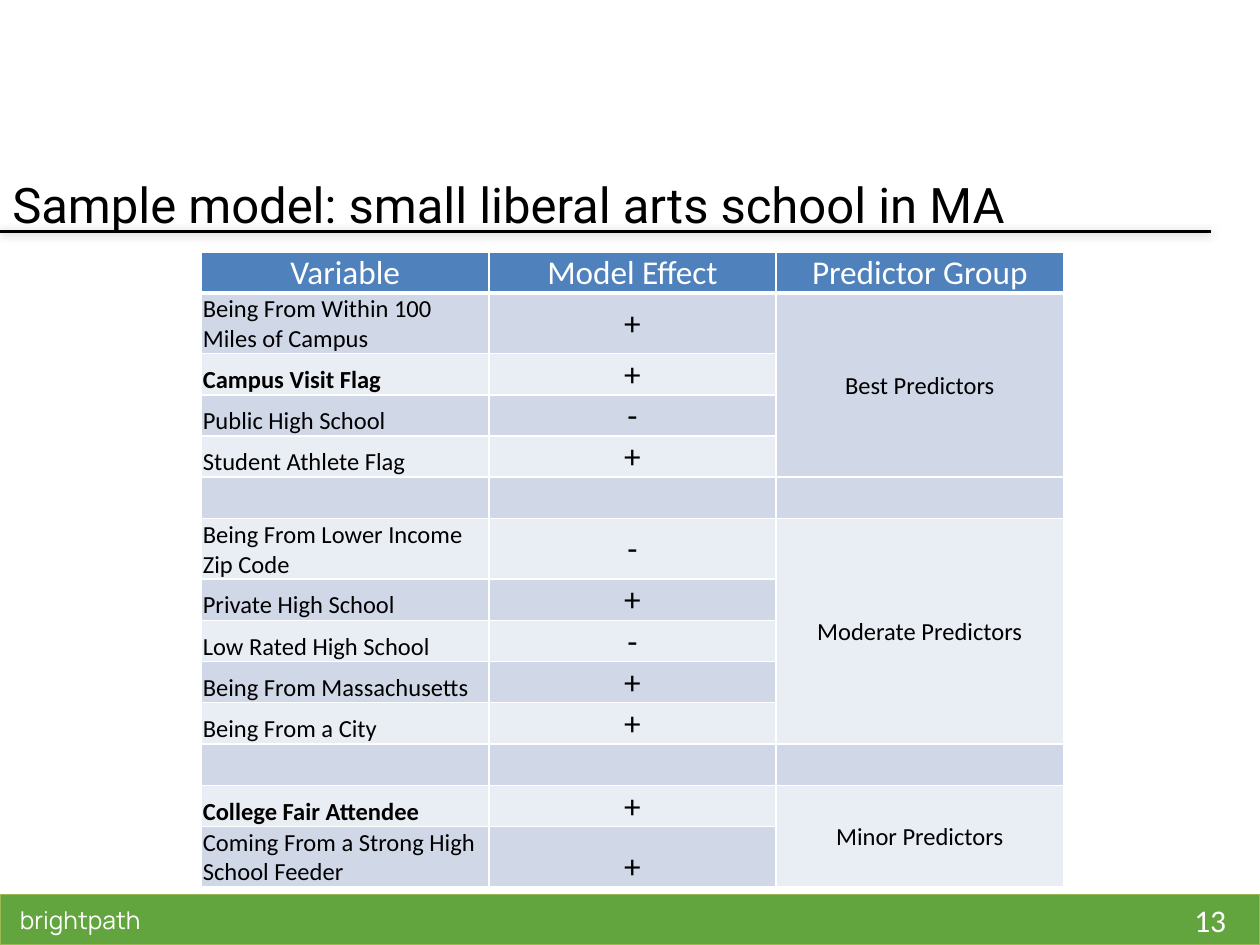
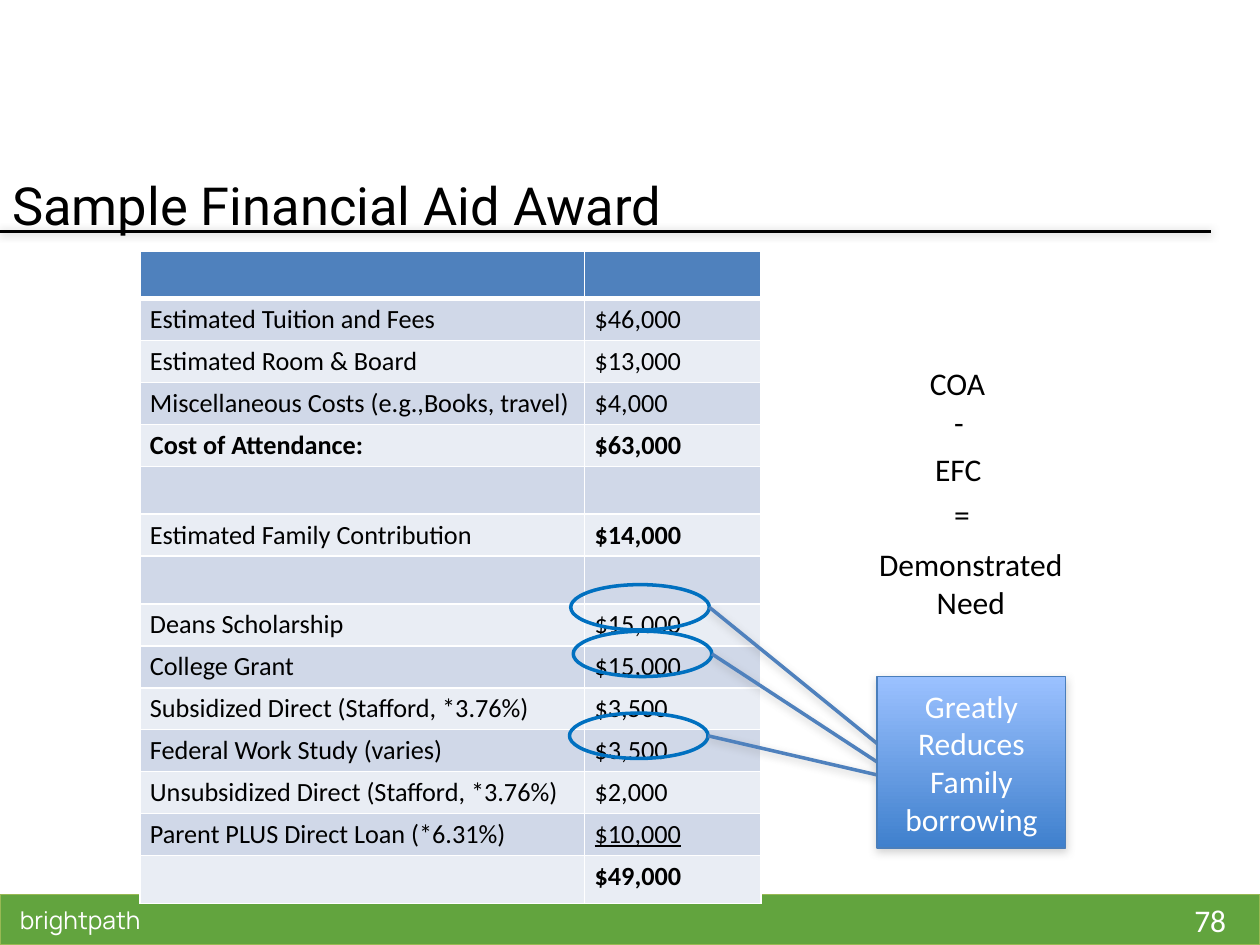
"""Build two slides on admission predictors and a sample financial aid award."""

from dataclasses import dataclass
from typing import NamedTuple, Optional, Sequence

from lxml.etree import SubElement
from pptx import Presentation
from pptx.dml.color import RGBColor
from pptx.enum.shapes import MSO_CONNECTOR, MSO_SHAPE
from pptx.enum.text import MSO_ANCHOR, PP_ALIGN
from pptx.oxml.ns import qn
from pptx.util import Emu, Inches, Pt

UNIT = Inches(0.1)
GRID_COLUMNS, GRID_ROWS = 100, 75


@dataclass(frozen=True)
class Theme:
    """Colours, fonts and type sizes of the deck."""

    ink: str = "000000"
    paper: str = "FFFFFF"
    footer: str = "62A43E"
    footer_edge: str = "98B954"
    accent: str = "4F81BD"
    band_dark: str = "D0D8E8"
    band_light: str = "E9EDF4"
    highlight: str = "0070C0"
    callout_top: str = "9BC1FF"
    callout_bottom: str = "3F80CD"
    callout_edge: str = "4A7EBB"
    shadow: str = "808080"
    body_font: str = "Calibri"
    title_font: str = "Roboto"
    brand_font: str = "Manrope"
    heading: int = 19
    text: int = 18
    award: int = 15
    small: int = 14


THEME = Theme()


class Area(NamedTuple):
    """Left, top, width and height in grid columns and rows."""

    left: float
    top: float
    width: float
    height: float


class Shadow(NamedTuple):
    """Downward shadow: opacity in percent, blur and distance in points."""

    opacity: int
    blur: float
    distance: float


class Factor(NamedTuple):
    """One predictor variable and the direction of its effect."""

    name: str
    effect: str
    bold: bool = False
    rows: float = 3.2


class PredictorGroup(NamedTuple):
    """Factors of similar strength."""

    title: str
    factors: Sequence[Factor]


class AwardLine(NamedTuple):
    """One line of the award letter."""

    label: str = ""
    amount: str = ""
    bold_label: bool = False
    bold_amount: bool = False
    underline: bool = False


class Aid(NamedTuple):
    """Ring around an aid amount and the tip of its leader line."""

    left: float
    top: float
    tip_column: float
    tip_row: float


GROUPS = (
    PredictorGroup("Best Predictors", (
        Factor("Being From Within 100 Miles of Campus", "+", rows=4.8),
        Factor("Campus Visit Flag", "+", bold=True),
        Factor("Public High School", "-"),
        Factor("Student Athlete Flag", "+"),
    )),
    PredictorGroup("Moderate Predictors", (
        Factor("Being From Lower Income Zip Code", "-", rows=4.8),
        Factor("Private High School", "+"),
        Factor("Low Rated High School", "-"),
        Factor("Being From Massachusetts", "+"),
        Factor("Being From a City", "+"),
    )),
    PredictorGroup("Minor Predictors", (
        Factor("College Fair Attendee", "+", bold=True),
        Factor("Coming From a Strong High School Feeder", "+", rows=4.8),
    )),
)

AWARD = (
    AwardLine(),
    AwardLine("Estimated Tuition and Fees", "$46,000"),
    AwardLine("Estimated Room & Board", "$13,000"),
    AwardLine("Miscellaneous Costs (e.g.,Books, travel)", "$4,000"),
    AwardLine("Cost of Attendance:", "$63,000", bold_label=True, bold_amount=True),
    AwardLine(),
    AwardLine("Estimated Family Contribution", "$14,000", bold_amount=True),
    AwardLine(),
    AwardLine("Deans Scholarship", "$15,000"),
    AwardLine("College Grant", "$15,000"),
    AwardLine("Subsidized Direct (Stafford, *3.76%)", "$3,500"),
    AwardLine("Federal Work Study (varies)", "$3,500"),
    AwardLine("Unsubsidized Direct (Stafford, *3.76%)", "$2,000"),
    AwardLine("Parent PLUS Direct Loan (*6.31%)", "$10,000", underline=True),
    AwardLine("", "$49,000", bold_amount=True),
)

FORMULA = (
    ("COA", Area(72.8, 28.4, 6.4, 4)),
    ("-", Area(74.7, 31.5, 2.8, 4)),
    ("EFC", Area(73.2, 35.2, 5.7, 4)),
    ("=", Area(74.7, 38.8, 3.3, 4)),
    ("Demonstrated\nNeed", Area(68.7, 42.8, 16.7, 7.1)),
)

AIDS = (Aid(45.3, 46.4, 71.2, 60.3), Aid(45.5, 50.1, 72.1, 62.1), Aid(45.2, 56.6, 72.2, 62.1))


def grid(count: float) -> Emu:
    """Turn grid columns or rows into a length."""
    return Emu(round(count * UNIT))


def place(area: Area) -> tuple:
    """Turn an area into four lengths."""
    return tuple(grid(count) for count in area)


def color(value: str) -> RGBColor:
    """Read a hexadecimal colour."""
    return RGBColor.from_string(value)


def write(frame, text: str, *, size: float = THEME.text, font: str = THEME.body_font,
          ink: str = THEME.ink, bold: bool = False, underline: bool = False,
          align: PP_ALIGN = PP_ALIGN.LEFT) -> None:
    """Write lines of text as formatted paragraphs."""
    for index, line in enumerate(text.split("\n")):
        paragraph = frame.add_paragraph() if index else frame.paragraphs[0]
        paragraph.alignment = align
        run = paragraph.add_run()
        run.text = line
        run.font.size, run.font.name = Pt(size), font
        run.font.bold, run.font.underline = bold, underline
        run.font.color.rgb = color(ink)


def add_label(slide, area: Area, text: str, *, anchor: MSO_ANCHOR = MSO_ANCHOR.TOP,
              wrap: bool = False, **style) -> None:
    """Add a text box."""
    frame = slide.shapes.add_textbox(*place(area)).text_frame
    frame.word_wrap, frame.vertical_anchor = wrap, anchor
    write(frame, text, **style)


def cast_shadow(shape, shadow: Shadow) -> None:
    """Give a shape or connector a downward shadow."""
    effects = SubElement(shape._element.spPr, qn("a:effectLst"))
    outer = SubElement(effects, qn("a:outerShdw"), blurRad=str(Pt(shadow.blur)),
                       dist=str(Pt(shadow.distance)), dir="5400000", rotWithShape="0")
    tone = SubElement(outer, qn("a:srgbClr"), val=THEME.shadow)
    SubElement(tone, qn("a:alpha"), val=str(shadow.opacity * 1000))


def add_line(slide, start: tuple, end: tuple, ink: str, width: float, shadow: Shadow) -> None:
    """Draw a straight line between two grid points."""
    line = slide.shapes.add_connector(MSO_CONNECTOR.STRAIGHT, *map(grid, start + end))
    line.line.color.rgb, line.line.width = color(ink), Pt(width)
    cast_shadow(line, shadow)


def add_panel(slide, kind: MSO_SHAPE, area: Area, edge: str, width: float,
              fill: Optional[str] = None):
    """Add an outlined shape, filled if a colour is given."""
    panel = slide.shapes.add_shape(kind, *place(area))
    panel.line.color.rgb, panel.line.width = color(edge), Pt(width)
    if fill:
        panel.fill.solid()
        panel.fill.fore_color.rgb = color(fill)
    else:
        panel.fill.background()
    return panel


def add_frame(deck, title: str, number: int, title_size: float):
    """Start a slide with footer band, brand, page number, rule and title."""
    slide = deck.slides.add_slide(deck.slide_layouts[6])
    band = add_panel(slide, MSO_SHAPE.RECTANGLE, Area(0, 71, GRID_COLUMNS, 4),
                     THEME.footer_edge, 0.75, THEME.footer)
    band.shadow.inherit = False
    add_line(slide, (0, 18.4), (96.1, 18.4), THEME.ink, 1.5, Shadow(50, 5, 0.5))
    add_label(slide, Area(92.1, 71, 7.9, 4), str(number), anchor=MSO_ANCHOR.MIDDLE,
              wrap=True, ink=THEME.paper, align=PP_ALIGN.CENTER)
    add_label(slide, Area(0.6, 71, 14, 4), "brightpath", anchor=MSO_ANCHOR.MIDDLE,
              size=THEME.small, font=THEME.brand_font, ink=THEME.paper)
    add_label(slide, Area(0, 12.6, 90, 7.2), title, anchor=MSO_ANCHOR.MIDDLE, wrap=True,
              size=title_size, font=THEME.title_font)
    return slide


def style_cell(cell, row: int, margins: tuple) -> None:
    """Set borders, banded fill and margins of a cell."""
    properties = cell._tc.get_or_add_tcPr()
    thick_side = {0: "lnB", 1: "lnT"}.get(row)
    for side in ("lnL", "lnR", "lnT", "lnB"):
        edge = SubElement(properties, qn(f"a:{side}"), w=str(Pt(3 if side == thick_side else 1)))
        SubElement(SubElement(edge, qn("a:solidFill")), qn("a:srgbClr"), val=THEME.paper)
    cell.fill.solid()
    band = THEME.band_dark if row % 2 else THEME.band_light
    cell.fill.fore_color.rgb = color(band if row else THEME.accent)
    cell.margin_left, cell.margin_top, cell.margin_right, cell.margin_bottom = map(Inches, margins)


def add_banded_table(slide, left: float, top: float, columns: Sequence[float],
                     rows: Sequence[float], margins: tuple):
    """Add an empty table with a header row and alternating bands."""
    area = Area(left, top, sum(columns), sum(rows))
    table = slide.shapes.add_table(len(rows), len(columns), *place(area)).table
    table.first_row = table.horz_banding = False
    for column, width in zip(table.columns, columns):
        column.width = grid(width)
    for index, (row, height) in enumerate(zip(table.rows, rows)):
        row.height = grid(height)
        for cell in row.cells:
            style_cell(cell, index, margins)
    return table


def fill_cell(cell, text: str, anchor: MSO_ANCHOR, **style) -> None:
    """Write and anchor the text of a cell."""
    cell.vertical_anchor = anchor
    if text:
        write(cell.text_frame, text, **style)


def build_model_slide(deck) -> None:
    """Show the predictors of a sample enrolment model."""
    slide = add_frame(deck, "Sample model: small liberal arts school in MA", 13, 28)
    heights = [3.2]
    for index, group in enumerate(GROUPS):
        heights += [3.3] * bool(index) + [factor.rows for factor in group.factors]
    table = add_banded_table(slide, 16, 20, [22.8] * 3, heights, (0.01, 0.01, 0.01, 0))
    centred = {"size": THEME.heading, "align": PP_ALIGN.CENTER}
    for column, heading in enumerate(("Variable", "Model Effect", "Predictor Group")):
        fill_cell(table.cell(0, column), heading, MSO_ANCHOR.BOTTOM, ink=THEME.paper, **centred)
    first = 1
    for group in GROUPS:
        title_cell = table.cell(first, 2)
        title_cell.merge(table.cell(first + len(group.factors) - 1, 2))
        fill_cell(title_cell, group.title, MSO_ANCHOR.MIDDLE, size=THEME.small,
                  align=PP_ALIGN.CENTER)
        for row, factor in enumerate(group.factors, first):
            fill_cell(table.cell(row, 0), factor.name, MSO_ANCHOR.BOTTOM,
                      size=THEME.small, bold=factor.bold)
            anchor = MSO_ANCHOR.MIDDLE if row == first else MSO_ANCHOR.BOTTOM
            fill_cell(table.cell(row, 1), factor.effect, anchor, **centred)
        first += len(group.factors) + 1


def build_award_slide(deck) -> None:
    """Show a sample award and the aid that reduces borrowing."""
    slide = add_frame(deck, "Sample Financial Aid Award", 78, 30)
    table = add_banded_table(slide, 11.1, 19.9, (35.3, 14), [3.33] * len(AWARD),
                             (0.08, 0.04, 0.08, 0.04))
    for row, line in enumerate(AWARD):
        fill_cell(table.cell(row, 0), line.label, MSO_ANCHOR.TOP, size=THEME.award,
                  bold=line.bold_label)
        fill_cell(table.cell(row, 1), line.amount, MSO_ANCHOR.TOP, size=THEME.award,
                  bold=line.bold_amount, underline=line.underline)
    for term, area in FORMULA:
        add_label(slide, area, term, align=PP_ALIGN.CENTER)
    for aid in AIDS:
        ring = Area(aid.left, aid.top, 11, 3.6)
        add_panel(slide, MSO_SHAPE.OVAL, ring, THEME.highlight, 2).shadow.inherit = False
        add_line(slide, (ring.left + ring.width, ring.top + ring.height / 2),
                 (aid.tip_column, aid.tip_row), THEME.accent, 2, Shadow(38, 5, 1.6))
    callout = add_panel(slide, MSO_SHAPE.RECTANGLE, Area(69.6, 53.7, 15, 13.6),
                        THEME.callout_edge, 0.75)
    callout.fill.gradient()
    callout.fill.gradient_angle = 270
    for stop, tone in zip(callout.fill.gradient_stops, (THEME.callout_top, THEME.callout_bottom)):
        stop.color.rgb = color(tone)
    cast_shadow(callout, Shadow(35, 5, 1.8))
    callout.text_frame.word_wrap = True
    callout.text_frame.vertical_anchor = MSO_ANCHOR.MIDDLE
    write(callout.text_frame, "Greatly Reduces Family borrowing", ink=THEME.paper,
          align=PP_ALIGN.CENTER)


def main() -> None:
    """Build and save the deck."""
    deck = Presentation()
    deck.slide_width, deck.slide_height = grid(GRID_COLUMNS), grid(GRID_ROWS)
    build_model_slide(deck)
    build_award_slide(deck)
    deck.save("out.pptx")


if __name__ == "__main__":
    main()
